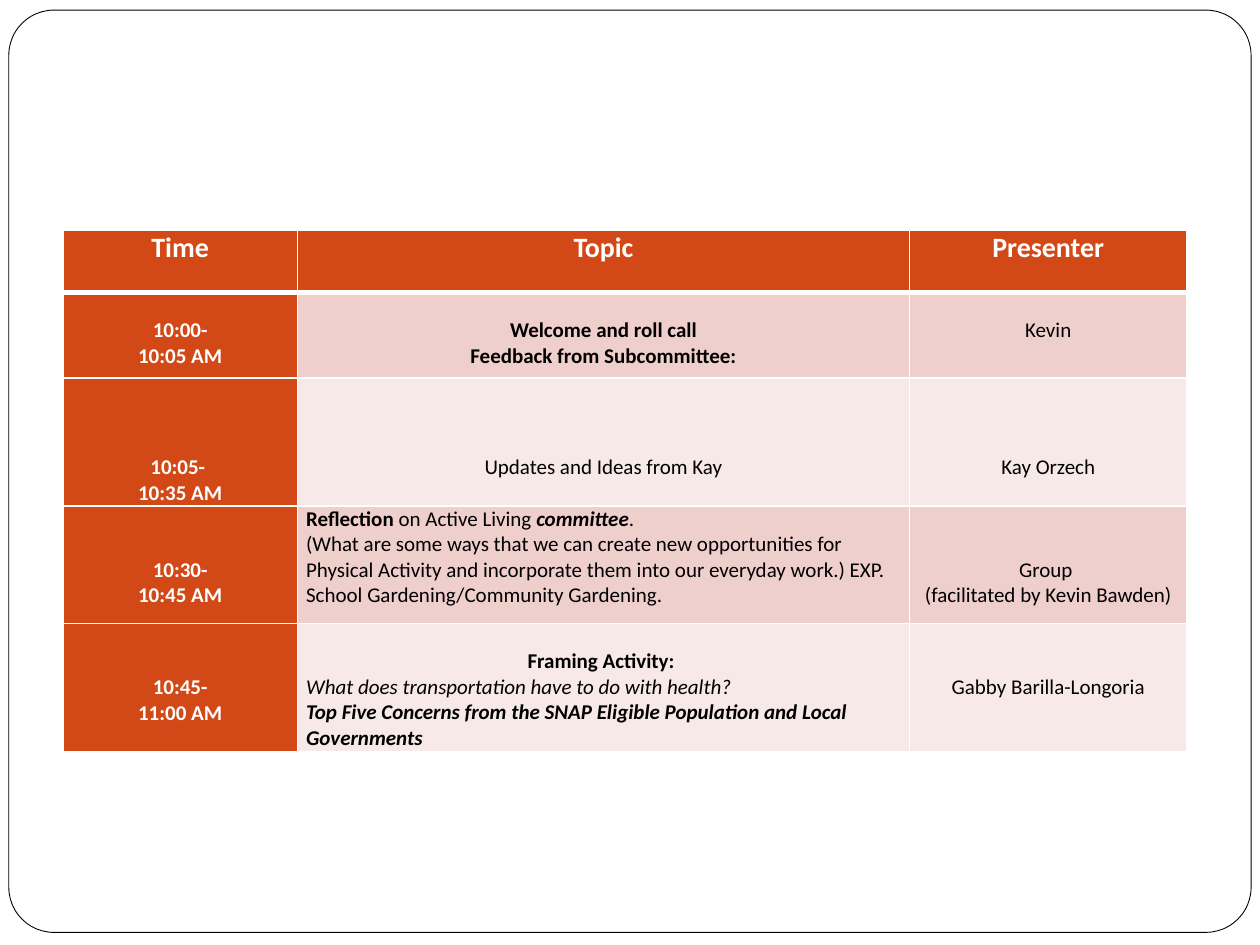
import pptx
import pptx.dml.color
import pptx.enum.shapes
import pptx.enum.text
import pptx.oxml
import pptx.oxml.ns
import pptx.util
from pptx.util import Inches

RGBColor = pptx.dml.color.RGBColor
WHITE = RGBColor(0xFF, 0xFF, 0xFF)
BLACK = RGBColor(0, 0, 0)
ORANGE = RGBColor(0xD3, 0x48, 0x17)
BANDS = [RGBColor(0xEF, 0xCF, 0xCC), RGBColor(0xF7, 0xE9, 0xE8)]

LEFT = pptx.enum.text.PP_ALIGN.LEFT
CENTER = pptx.enum.text.PP_ALIGN.CENTER
FONT = "Calibri"
LINE_HEIGHT = 0.2035  # one line of 12 point text, in inches

COLUMN_WIDTHS = [1.86, 4.86, 2.2]
ROW_HEIGHTS = [0.49, 0.68, 1.01, 0.93, 1.01]


def centered(*lines, style=""):
    """Centred paragraphs of one run each; style holds b and/or i."""
    return [(CENTER, [(line, style)]) for line in lines]


# Each cell: lines left free at the top, then paragraphs of (text, style) runs
AGENDA = [
    [(0, centered(title, style="b")) for title in ("Time", "Topic", "Presenter")],
    [
        (1, centered("10:00-", "10:05 AM", style="b")),
        (1, centered("Welcome and roll call", "Feedback from Subcommittee:", style="b")),
        (1, centered("Kevin")),
    ],
    [
        (3, centered("10:05- ", "10:35 AM", style="b")),
        (3, centered("Updates and Ideas from Kay")),
        (3, centered("Kay Orzech")),
    ],
    [
        (2, centered("10:30-", "10:45 AM", style="b")),
        (0, [
            (LEFT, [("Reflection ", "b"), ("on Active Living ", ""),
                    ("committee", "bi"), (".", "")]),
            (LEFT, [("(What are some ways that we can create new opportunities for "
                     "Physical Activity and incorporate them into our everyday work.) "
                     "EXP. School Gardening/Community Gardening.", "")]),
        ]),
        (2, centered("Group ", "(facilitated by Kevin Bawden)")),
    ],
    [
        (2, centered("10:45-", "11:00 AM", style="b")),
        (1, centered("Framing Activity: ", style="b") + [
            (LEFT, [("What does transportation have to do with health?", "i")]),
            (LEFT, [("Top Five Concerns from the SNAP Eligible Population "
                     "and Local Governments", "bi")]),
        ]),
        (2, centered("Gabby Barilla-Longoria")),
    ],
]


def add_frame(page):
    frame = page.shapes.add_shape(
        pptx.enum.shapes.MSO_SHAPE.ROUNDED_RECTANGLE,
        Inches(0.07), Inches(0.08), Inches(9.86), Inches(7.32))
    frame.adjustments[0] = 0.049
    frame.shadow.inherit = False
    frame.fill.solid()
    frame.fill.fore_color.rgb = WHITE
    frame.line.color.rgb = BLACK
    frame.line.width = pptx.util.Pt(0.5)


def set_borders(cell, top, bottom):
    properties = cell._tc.get_or_add_tcPr()
    widths = {"lnL": 1, "lnR": 1, "lnT": top, "lnB": bottom}
    for position, (side, width) in enumerate(widths.items()):
        border = pptx.oxml.parse_xml(
            f'<a:{side} {pptx.oxml.ns.nsdecls("a")} w="{pptx.util.Pt(width)}">'
            f'<a:solidFill><a:srgbClr val="{WHITE}"/></a:solidFill></a:{side}>')
        properties.insert(position, border)


def fill_cell(cell, content, size, text_color, background):
    free_lines, paragraphs = content
    cell.margin_left = cell.margin_right = Inches(0.07)
    cell.margin_top = Inches(free_lines * LINE_HEIGHT)
    cell.margin_bottom = 0
    cell.fill.solid()
    cell.fill.fore_color.rgb = background
    for index, (alignment, runs) in enumerate(paragraphs):
        frame = cell.text_frame
        para = frame.add_paragraph() if index else frame.paragraphs[0]
        para.alignment = alignment
        for text, style in runs:
            span = para.add_run()
            span.text = text
            span.font.name = FONT
            span.font.size = pptx.util.Pt(size)
            span.font.bold = "b" in style
            span.font.italic = "i" in style
            span.font.color.rgb = text_color


def add_agenda(page):
    table = page.shapes.add_table(
        len(ROW_HEIGHTS), len(COLUMN_WIDTHS), Inches(0.5), Inches(1.83),
        Inches(sum(COLUMN_WIDTHS)), Inches(sum(ROW_HEIGHTS))).table
    for column, width in zip(table.columns, COLUMN_WIDTHS):
        column.width = Inches(width)
    for row, height in zip(table.rows, ROW_HEIGHTS):
        row.height = Inches(height)

    for r, contents in enumerate(AGENDA):
        for c, content in enumerate(contents):
            cell = table.cell(r, c)
            is_heading = r == 0 or c == 0
            fill_cell(cell, content, 16 if r == 0 else 12,
                      WHITE if is_heading else BLACK,
                      ORANGE if is_heading else BANDS[(r - 1) % 2])
            # The heavier rule lies between the header and the first row
            set_borders(cell, 3 if r == 1 else 1, 3 if r == 0 else 1)


def main():
    deck = pptx.Presentation()
    deck.slide_width, deck.slide_height = Inches(10), Inches(7.5)
    page = deck.slides.add_slide(deck.slide_layouts[6])
    add_frame(page)
    add_agenda(page)
    deck.save("out.pptx")


if __name__ == "__main__":
    main()
